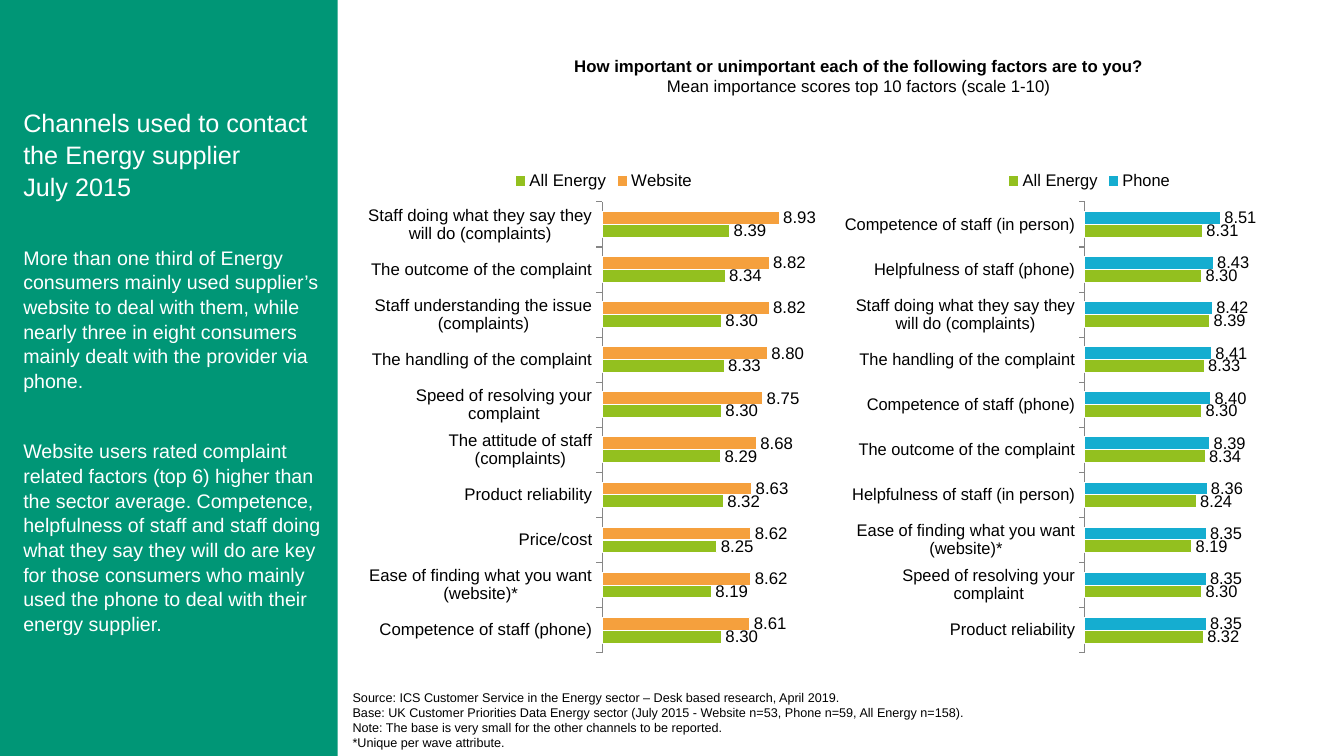
"""Build the slide on channels used to contact the energy supplier."""
from lxml import etree
from pptx import Presentation
from pptx import util as u
from pptx.chart import data as cd
from pptx.dml.color import RGBColor
from pptx.enum import chart as ch, shapes, text
from pptx.oxml import ns

FONT = "Arial"
HEX = {"panel": "009676", "white": "FFFFFF", "black": "000000", "axis": "868686",
       "Website": "F5A03D", "Phone": "15ADD0", "All Energy": "93C01F"}

TITLE = ["Channels used to contact the Energy supplier", "July 2015"]
BODY = [
    "More than one third of Energy consumers mainly used supplier’s website to deal "
    "with them, while nearly three in eight consumers mainly dealt with the provider "
    "via phone.",
    "Website users rated complaint related factors (top 6) higher than the sector "
    "average. Competence, helpfulness of staff and staff doing what they say they will "
    "do are key for those consumers who mainly used the phone to deal with their "
    "energy supplier.",
]
HEAD = ["How important or unimportant each of the following factors are to you?",
        "Mean importance scores top 10 factors (scale 1-10)"]
NOTES = [
    "Source: ICS Customer Service in the Energy sector – Desk based research, April 2019.",
    "Base: UK Customer Priorities Data Energy sector (July 2015 - Website n=53, "
    "Phone n=59, All Energy n=158).",
    "Note: The base is very small for the other channels to be reported.",
    "*Unique per wave attribute.",
]
WEB = [
    ("Staff doing what they say they will do (complaints)", 8.93, 8.39),
    ("The outcome of the complaint", 8.82, 8.34),
    ("Staff understanding the issue (complaints)", 8.82, 8.30),
    ("The handling of the complaint", 8.80, 8.33),
    ("Speed of resolving your complaint", 8.75, 8.30),
    ("The attitude of staff (complaints)", 8.68, 8.29),
    ("Product reliability", 8.63, 8.32),
    ("Price/cost", 8.62, 8.25),
    ("Ease of finding what you want (website)*", 8.62, 8.19),
    ("Competence of staff (phone)", 8.61, 8.30),
]
PHONE = [
    ("Competence of staff (in person)", 8.51, 8.31),
    ("Helpfulness of staff (phone)", 8.43, 8.30),
    ("Staff doing what they say they will do (complaints)", 8.42, 8.39),
    ("The handling of the complaint", 8.41, 8.33),
    ("Competence of staff (phone)", 8.40, 8.30),
    ("The outcome of the complaint", 8.39, 8.34),
    ("Helpfulness of staff (in person)", 8.36, 8.24),
    ("Ease of finding what you want (website)*", 8.35, 8.19),
    ("Speed of resolving your complaint", 8.35, 8.30),
    ("Product reliability", 8.35, 8.32),
]


def tint(name):
    return RGBColor.from_string(HEX[name])


def place(box):
    return [u.Pt(side) for side in box]


def add_panel(slide, box):
    panel = slide.shapes.add_shape(shapes.MSO_SHAPE.RECTANGLE, *place(box))
    panel.shadow.inherit = False
    panel.fill.solid()
    panel.fill.fore_color.rgb = tint("panel")
    panel.line.fill.background()
    slide.shapes._spTree.insert(2, panel._element)


def write(shape, lines, size, color="black", align=text.PP_ALIGN.LEFT,
          left=7.2, gap=0, pitch=1.0):
    frame = shape.text_frame
    frame.word_wrap = True
    frame.auto_size = text.MSO_AUTO_SIZE.NONE
    frame.vertical_anchor = text.MSO_ANCHOR.TOP
    frame.margin_left, frame.margin_right = u.Pt(left), u.Pt(7.2)
    frame.margin_top = frame.margin_bottom = u.Pt(3.6)
    frame.text = "\n".join(lines)
    for rank, para in enumerate(frame.paragraphs):
        para.alignment = align
        para.line_spacing = pitch
        para.space_before = u.Pt(gap if rank else 0)
        for run in para.runs:
            run.font.name, run.font.size = FONT, u.Pt(size)
            run.font.color.rgb = tint(color)
    return frame


def add_text(slide, box, lines, size, **look):
    return write(slide.shapes.add_textbox(*place(box)), lines, size, **look)


def set_layout(parent, index, inner=False, **parts):
    """Give a chart part a fixed place, as fractions of the chart."""
    for old in parent.findall(ns.qn("c:layout")):
        parent.remove(old)
    layout = etree.Element(ns.qn("c:layout"))
    manual = etree.SubElement(layout, ns.qn("c:manualLayout"))
    if inner:
        etree.SubElement(manual, ns.qn("c:layoutTarget"), val="inner")
    for key in ("x", "y"):
        etree.SubElement(manual, ns.qn(f"c:{key}Mode"), val="edge")
    for key, part in parts.items():
        etree.SubElement(manual, ns.qn(f"c:{key}"), val=str(part))
    parent.insert(index, layout)


def add_bars(slide, box, name, rows, key_left):
    names, scores, means = zip(*rows)
    data = cd.CategoryChartData(number_format="0.00")
    data.categories = names
    data.add_series(name, scores)
    data.add_series("All Energy", means)
    chart = slide.shapes.add_chart(ch.XL_CHART_TYPE.BAR_CLUSTERED, *place(box), data).chart
    chart.has_title = False
    chart.font.name, chart.font.size = FONT, u.Pt(12)
    chart.font.color.rgb = tint("black")

    chart.has_legend = True
    chart.legend.position = ch.XL_LEGEND_POSITION.TOP
    chart.legend.include_in_layout = False
    set_layout(chart.legend._element, 1, x=key_left, y=0.07)
    set_layout(chart._chartSpace.chart.plotArea, 0, inner=True,
               x=0.51, y=0.134, w=0.457, h=0.852)

    axis = chart.category_axis
    axis.reverse_order = True
    axis.major_tick_mark = ch.XL_TICK_MARK.OUTSIDE
    axis.format.line.color.rgb = tint("axis")
    scale = chart.value_axis
    scale.minimum_scale, scale.maximum_scale = 7, 9.3
    scale.has_major_gridlines = False
    scale.visible = False

    plot = chart.plots[0]
    plot.gap_width, plot.overlap = 150, 0
    plot.vary_by_categories = False
    for bars in plot.series:
        bars.format.fill.solid()
        bars.format.fill.fore_color.rgb = tint(bars.name)
        bars.format.line.color.rgb = tint("white")
        bars.format.line.width = u.Pt(0.75)
        bars.invert_if_negative = False
        tags = bars.data_labels
        tags.show_value = True
        tags.number_format, tags.number_format_is_linked = "0.00", False
        tags.position = ch.XL_LABEL_POSITION.OUTSIDE_END


def main():
    deck = Presentation()
    deck.slide_width, deck.slide_height = u.Pt(960), u.Pt(540)
    slide = deck.slides.add_slide(deck.slide_layouts[5])
    add_panel(slide, (0, 0, 241.2, 540))

    title = slide.shapes.title
    title.left, title.top, title.width, title.height = place((0, 72, 240, 99))
    side = {"color": "white", "left": 16.6, "pitch": 1.05}
    write(title, TITLE, 18, **side)
    add_text(slide, (0, 171, 240, 264), BODY, 14, gap=32.5, **side)

    head = add_text(slide, (393, 36, 441, 36), HEAD, 12, align=text.PP_ALIGN.CENTER)
    head.paragraphs[0].runs[0].font.bold = True
    add_text(slide, (244.8, 489, 554.4, 51), NOTES, 9)

    for left, name, rows, key in ((262, "Website", WEB, 0.31),
                                  (603.4, "Phone", PHONE, 0.33)):
        add_bars(slide, (left, 93.6, 329.8, 378), name, rows, key)
    deck.save("out.pptx")


if __name__ == "__main__":
    main()
